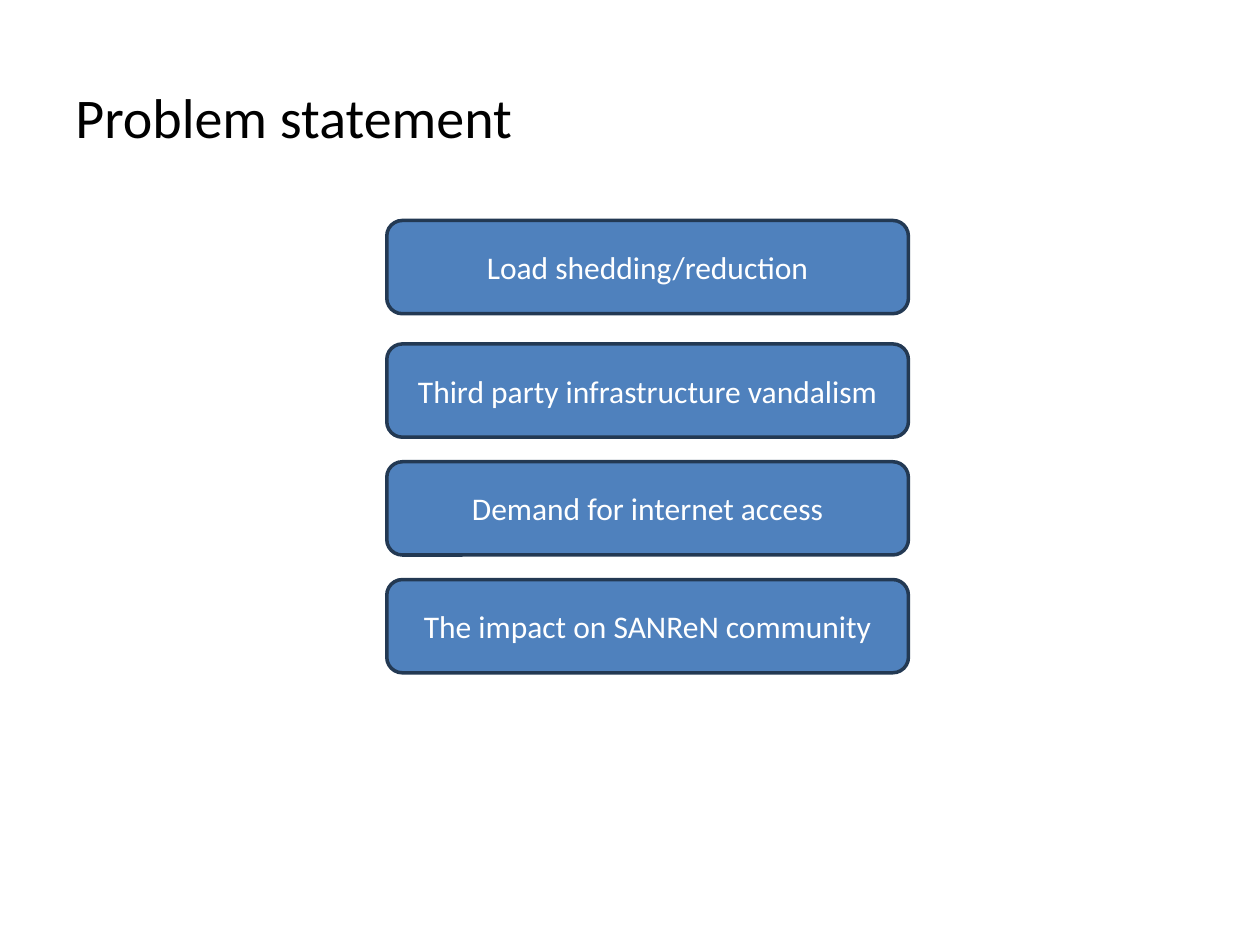
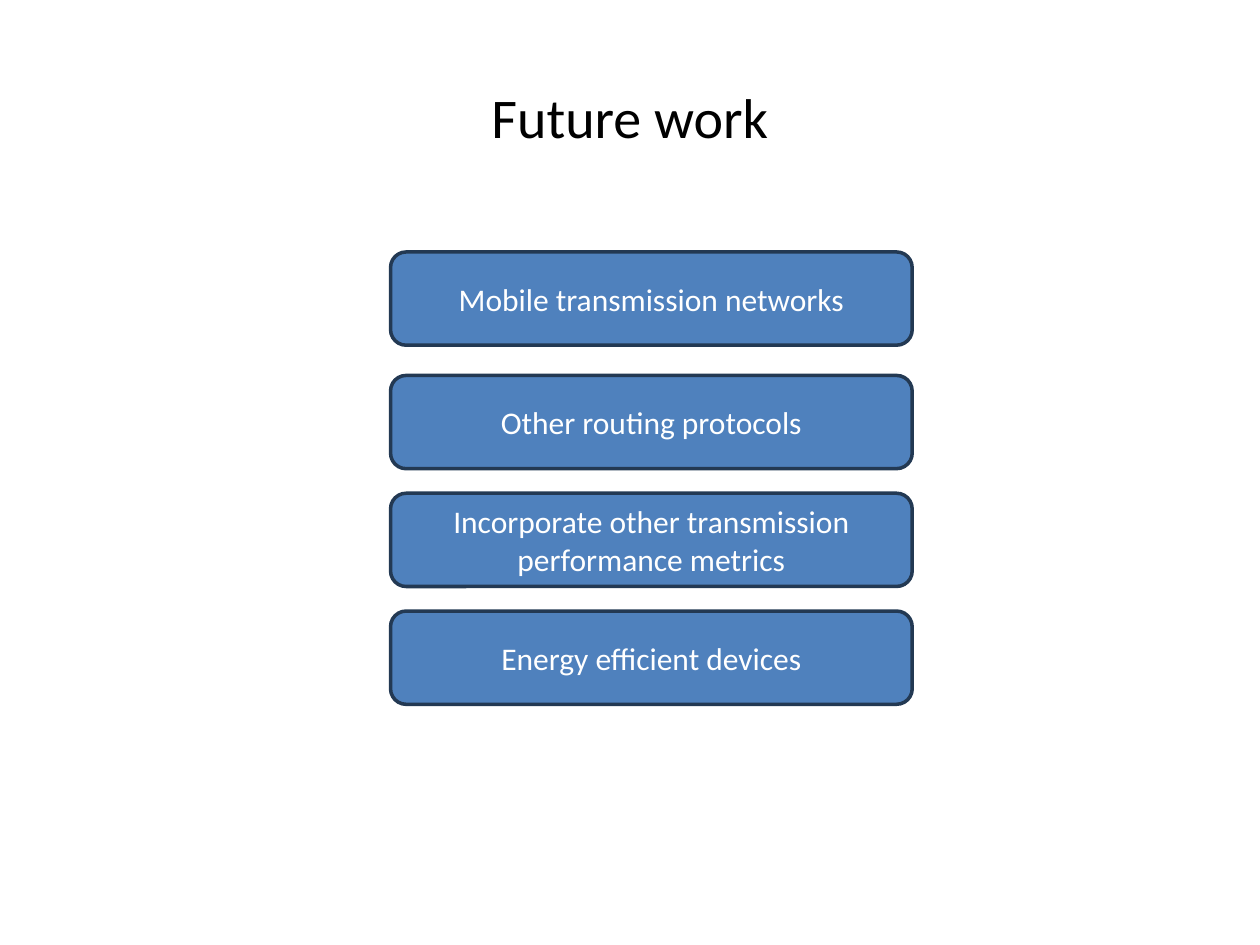
"""Builds two slides, each with a title above a stack of four rounded boxes."""
from pptx import Presentation
from pptx.dml.color import RGBColor
from pptx.enum.shapes import MSO_SHAPE as Preset
from pptx.enum.text import MSO_ANCHOR as Anchor, PP_ALIGN as Align
from pptx.util import Inches, Pt

SLIDES = [
    {
        "title": "Problem statement",
        "align": Align.LEFT,
        "stack": (3.07, 1.75),
        "boxes": [
            "Load shedding/reduction",
            "Third party infrastructure vandalism",
            "Demand for internet access",
            "The impact on SANReN community",
        ],
    },
    {
        "title": "Future work",
        "align": Align.CENTER,
        "stack": (3.1, 2),
        "boxes": [
            "Mobile transmission networks",
            "Other routing protocols",
            "Incorporate other transmission performance metrics",
            "Energy efficient devices",
        ],
    },
]

WIDTH, HEIGHT = 10, 7.5
FONT = "Calibri"
TITLE_COLOR, BOX_FILL, BOX_LINE, BOX_TEXT = "000000", "4F81BD", "233953", "FFFFFF"
TITLE_AREA = (WIDTH * 0.05, HEIGHT * 0.04, WIDTH * 0.9, HEIGHT / 6)
BOX_WIDTH, BOX_HEIGHT = 4.14, 0.74
ROW_PITCH, FIRST_GAP_EXTRA = 0.935, 0.045


def color(hex_code):
    return RGBColor.from_string(hex_code)


def write(shape, text, size, hex_code, align):
    frame = shape.text_frame
    frame.word_wrap = True
    frame.vertical_anchor = Anchor.MIDDLE
    paragraph = frame.paragraphs[0]
    paragraph.text = text
    paragraph.alignment = align
    paragraph.font.name = FONT
    paragraph.font.size = Pt(size)
    paragraph.font.color.rgb = color(hex_code)


def add_title(slide, text, align):
    title = slide.shapes.add_textbox(*map(Inches, TITLE_AREA))
    write(title, text, 32, TITLE_COLOR, align)


def add_box(slide, text, left, top):
    area = map(Inches, (left, top, BOX_WIDTH, BOX_HEIGHT))
    box = slide.shapes.add_shape(Preset.ROUNDED_RECTANGLE, *area)
    box.shadow.inherit = False
    box.fill.solid()
    box.fill.fore_color.rgb = color(BOX_FILL)
    box.line.color.rgb = color(BOX_LINE)
    box.line.width = Pt(2)
    write(box, text, 18, BOX_TEXT, Align.CENTER)


def main():
    presentation = Presentation()
    presentation.slide_width, presentation.slide_height = Inches(WIDTH), Inches(HEIGHT)
    for content in SLIDES:
        slide = presentation.slides.add_slide(presentation.slide_layouts[6])
        add_title(slide, content["title"], content["align"])
        left, top = content["stack"]
        for row, text in enumerate(content["boxes"]):
            offset = row * ROW_PITCH + (FIRST_GAP_EXTRA if row else 0)
            add_box(slide, text, left, top + offset)
    presentation.save("out.pptx")


if __name__ == "__main__":
    main()
